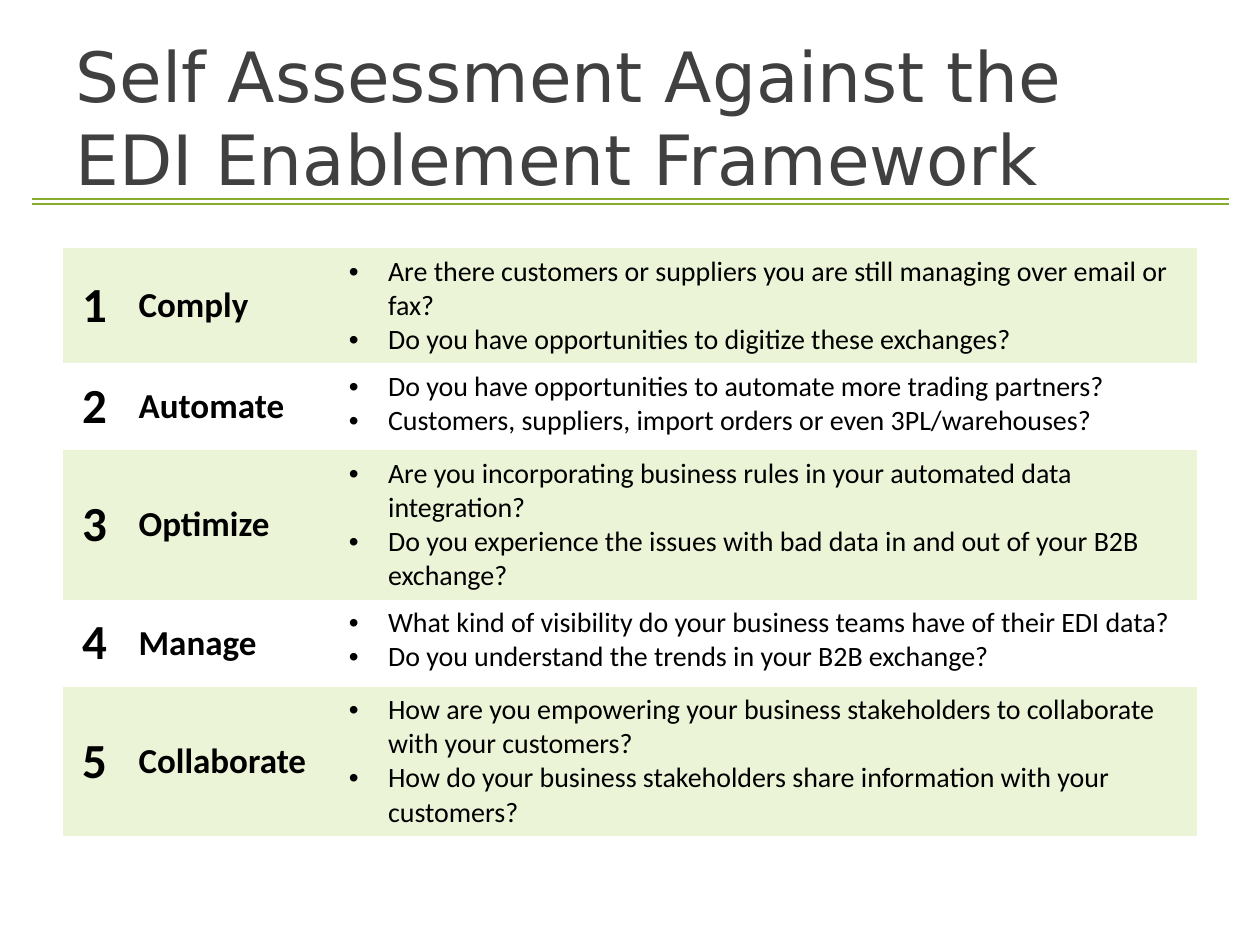
from lxml.etree import SubElement
from pptx import Presentation
from pptx.dml.color import RGBColor
from pptx.enum.shapes import MSO_CONNECTOR
from pptx.enum.text import MSO_ANCHOR, MSO_AUTO_SIZE, PP_ALIGN
from pptx.oxml.ns import qn
from pptx.util import Cm, Pt

COLORS = {"title": "404040", "text": "000000", "rule": "88AC2E", "band": "ECF4D8"}
NO_STYLE = "{2D5ABB26-0587-4C30-8999-92F81FD0307C}"
STAGES = [
    ("Comply", [
        "Are there customers or suppliers you are still managing over email or fax?",
        "Do you have opportunities to digitize these exchanges?"]),
    ("Automate", [
        "Do you have opportunities to automate more trading partners?",
        "Customers, suppliers, import orders or even 3PL/warehouses?"]),
    ("Optimize", [
        "Are you incorporating business rules in your automated data integration?",
        "Do you experience the issues with bad data in and out of your B2B exchange?"]),
    ("Manage", [
        "What kind of visibility do your business teams have of their EDI data?",
        "Do you understand the trends in your B2B exchange?"]),
    ("Collaborate", [
        "How are you empowering your business stakeholders to collaborate with your customers?",
        "How do your business stakeholders share information with your customers?"]),
]


def format_runs(paragraph, name, size, color, bold=False):
    for run in paragraph.runs:
        run.font.name = name
        run.font.size = Pt(size)
        run.font.bold = bold
        run.font.color.rgb = RGBColor.from_string(COLORS[color])


def add_bullet(paragraph):
    properties = paragraph._p.get_or_add_pPr()
    properties.set("marL", str(Cm(0.79)))
    properties.set("indent", str(-Cm(0.79)))
    SubElement(properties, qn("a:buFont"), typeface="Arial")
    SubElement(properties, qn("a:buChar"), char="•")


presentation = Presentation()
presentation.slide_width = Cm(25.4)
presentation.slide_height = Cm(19.05)
slide = presentation.slides.add_slide(presentation.slide_layouts[5])

title = slide.shapes.title
title.left, title.top, title.width, title.height = Cm(1.27), Cm(0.76), Cm(22.86), Cm(3.18)
title_frame = title.text_frame
title_frame.text = "Self Assessment Against the EDI Enablement Framework"
title_frame.word_wrap = True
title_frame.auto_size = MSO_AUTO_SIZE.NONE
title_frame.vertical_anchor = MSO_ANCHOR.MIDDLE
title_frame.paragraphs[0].alignment = PP_ALIGN.LEFT
format_runs(title_frame.paragraphs[0], "DejaVu Sans", 39.6, "title")

row_heights = [Cm(1.75)] * 4 + [Cm(2.13)]
table = slide.shapes.add_table(
    len(STAGES), 3, Cm(1.27), Cm(5), Cm(22.86), sum(row_heights)).table
table.first_row = False
table.horz_banding = False
table._tbl.tblPr.find(qn("a:tableStyleId")).text = NO_STYLE
for column, width in zip(table.columns, (1.27, 4.24, 17.35)):
    column.width = Cm(width)

for index, (stage, questions) in enumerate(STAGES):
    table.rows[index].height = row_heights[index]
    number_cell, stage_cell, question_cell = table.rows[index].cells
    for cell in (number_cell, stage_cell, question_cell):
        if index % 2 == 0:
            cell.fill.solid()
            cell.fill.fore_color.rgb = RGBColor.from_string(COLORS["band"])
        else:
            cell.fill.background()

    for cell, text, size in ((number_cell, str(index + 1), 28), (stage_cell, stage, 20)):
        cell.vertical_anchor = MSO_ANCHOR.MIDDLE
        cell.text_frame.text = text
        format_runs(cell.text_frame.paragraphs[0], "Calibri", size, "text", True)
    number_cell.text_frame.paragraphs[0].alignment = PP_ALIGN.CENTER

    question_cell.text_frame.text = "\n".join(questions)
    for paragraph in question_cell.text_frame.paragraphs:
        add_bullet(paragraph)
        format_runs(paragraph, "Calibri", 16, "text")

for height in (Cm(4.11), Cm(4.01)):
    rule = slide.shapes.add_connector(
        MSO_CONNECTOR.STRAIGHT, Cm(0.64), height, Cm(24.77), height)
    rule.line.color.rgb = RGBColor.from_string(COLORS["rule"])
    rule.line.width = Pt(1.5)
    SubElement(rule._element.spPr, qn("a:effectLst"))

presentation.save("out.pptx")
